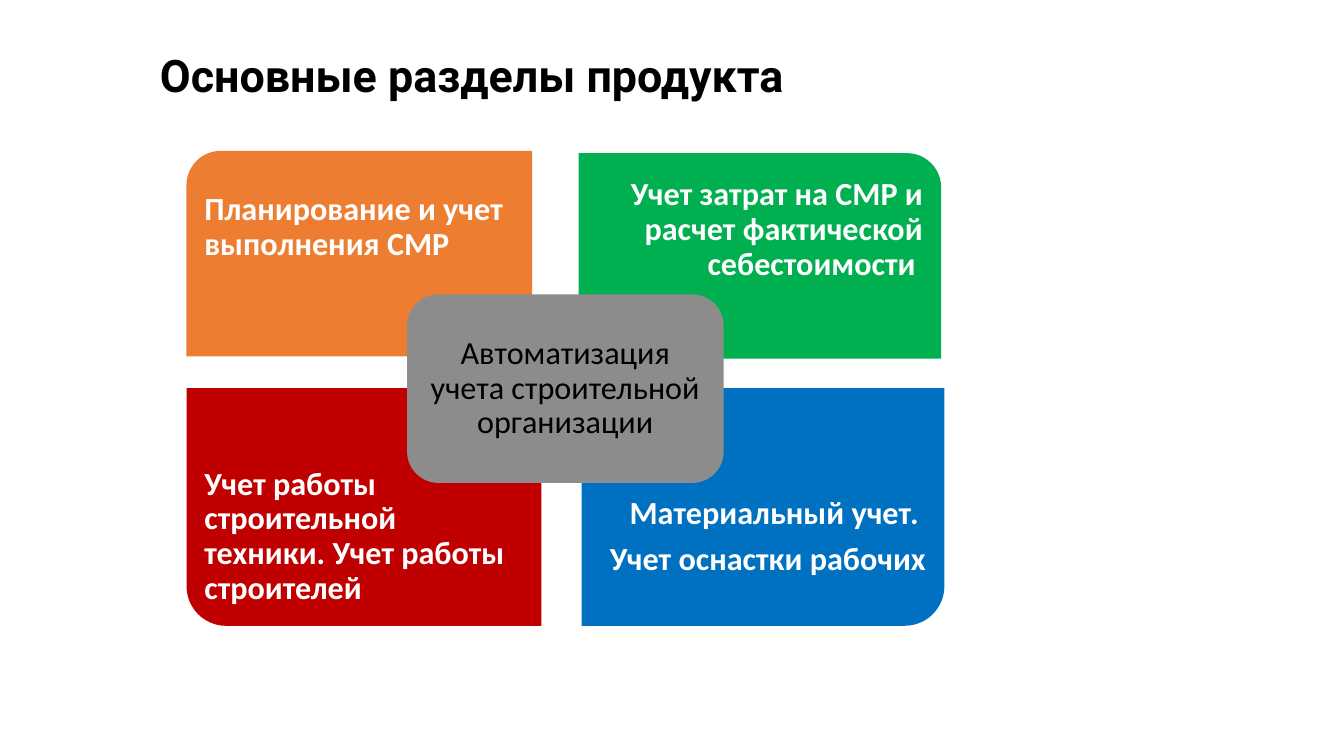
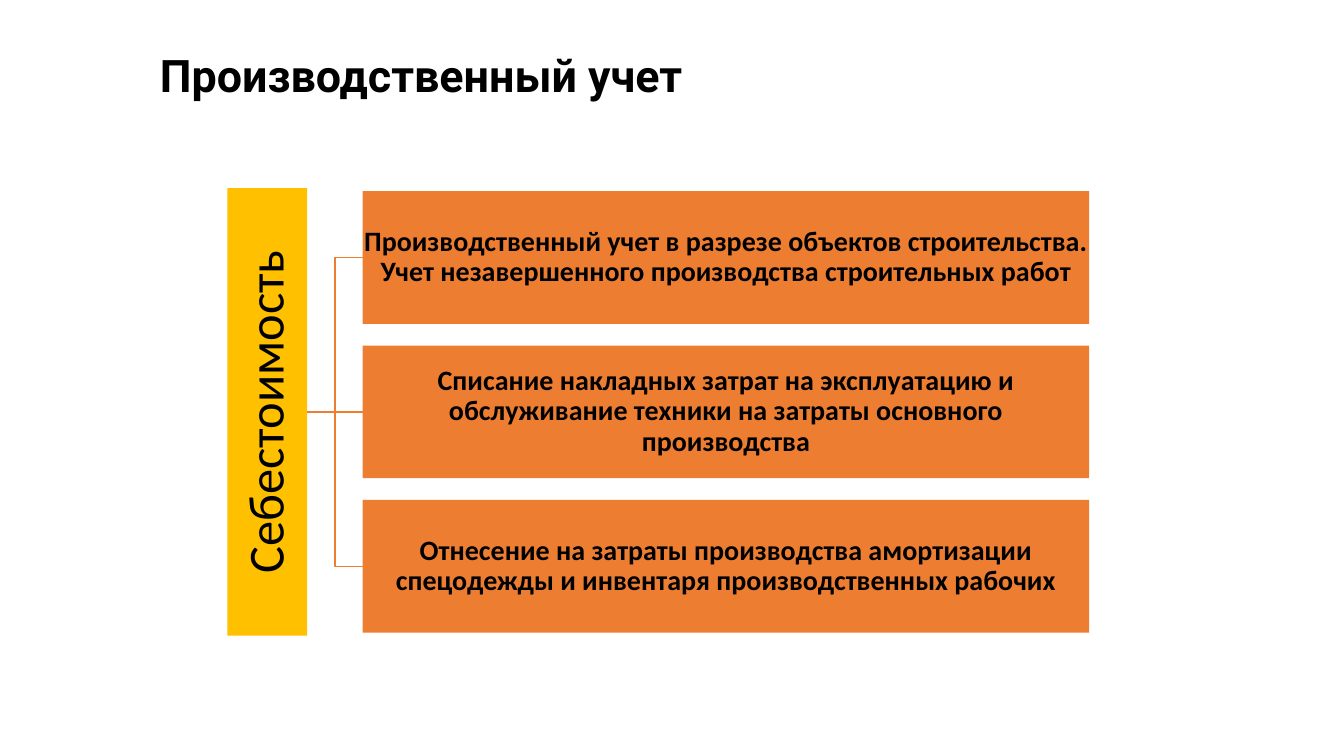
import pptx
import pptx.dml.color
import pptx.enum.shapes
import pptx.enum.text
import pptx.oxml
import pptx.util

Cm = pptx.util.Cm
Pt = pptx.util.Pt
Align = pptx.enum.text.PP_ALIGN
Shape = pptx.enum.shapes.MSO_SHAPE
Connector = pptx.enum.shapes.MSO_CONNECTOR

COLORS = {
    "black": "000000",
    "white": "FFFFFF",
    "orange": "ED7D31",
    "green": "00B050",
    "red": "C00000",
    "blue": "0070C0",
    "gray": "8C8C8C",
    "yellow": "FFC000",
}
BODY_FONT = "Calibri"
TITLE_FONT = "Roboto"
LINE_SPACING = 0.9
TILE_TEXT_SHARE = 0.75

TILES = [
    ((4.7, 3.8, 8.71, 5.18), "orange", 270, Align.LEFT,
     ["Планирование и учет выполнения СМР"]),
    ((14.58, 3.86, 9.14, 5.18), "green", 0, Align.RIGHT,
     ["Учет затрат на СМР и расчет фактической себестоимости "]),
    ((4.7, 9.78, 8.94, 5.99), "red", 180, Align.LEFT,
     ["Учет работы строительной техники. Учет работы строителей"]),
    ((14.66, 9.78, 9.14, 5.99), "blue", 90, Align.RIGHT,
     ["Материальный учет. ", "Учет оснастки рабочих"]),
]
COST_ITEMS = [
    "Производственный учет в разрезе объектов строительства. "
    "Учет незавершенного производства строительных работ",
    "Списание накладных затрат на эксплуатацию и обслуживание техники "
    "на затраты основного производства",
    "Отнесение на затраты производства амортизации спецодежды "
    "и инвентаря производственных рабочих",
]


def rgb(name):
    """Return the named colour."""
    return pptx.dml.color.RGBColor.from_string(COLORS[name])


def write_text(shape, lines, size, color="black", bold=False,
               align=Align.CENTER, inset=0.25, font=BODY_FONT):
    """Fill a shape with vertically centred paragraphs."""
    frame = shape.text_frame
    frame.word_wrap = True
    frame.vertical_anchor = pptx.enum.text.MSO_ANCHOR.MIDDLE
    frame.margin_left = frame.margin_right = Cm(inset)
    frame.margin_top = frame.margin_bottom = Cm(inset)
    for index, line in enumerate(lines):
        paragraph = frame.add_paragraph() if index else frame.paragraphs[0]
        paragraph.alignment = align
        paragraph.line_spacing = LINE_SPACING
        if index:
            paragraph.space_before = Pt(8)
        run = paragraph.add_run()
        run.text = line
        run.font.name = font
        run.font.size = Pt(size)
        run.font.bold = bold
        run.font.color.rgb = rgb(color)


def add_block(slide, kind, box, color):
    """Add a flat filled shape without outline."""
    shape = slide.shapes.add_shape(kind, *map(Cm, box))
    shape.shadow.inherit = False
    shape.fill.solid()
    shape.fill.fore_color.rgb = rgb(color)
    shape.line.fill.background()
    return shape


def add_titled_slide(presentation, title):
    """Add a blank slide with the shared title style."""
    slide = presentation.slides.add_slide(presentation.slide_layouts[6])
    text_box = slide.shapes.add_textbox(Cm(3.78), Cm(1.17), Cm(27.25), Cm(1.6))
    write_text(text_box, [title], 32, bold=True, align=Align.LEFT, font=TITLE_FONT)
    return slide


def add_tile(slide, box, color, rotation, align, lines):
    """Add a tile whose rounded corner is turned to the outside."""
    left, top, width, height = box
    text_height = height * TILE_TEXT_SHARE
    text_top = top + height - text_height if rotation in (90, 180) else top
    if rotation in (90, 270):
        shift = (width - height) / 2
        box = (left + shift, top - shift, height, width)
    tile = add_block(slide, Shape.ROUND_1_RECTANGLE, box, color)
    tile.rotation = rotation
    text_box = slide.shapes.add_textbox(
        *map(Cm, (left, text_top, width, text_height)))
    write_text(text_box, lines, 23, "white", True, align, 0.45)


def add_link(slide, source, target, kind):
    """Join the right side of one block to the left side of another."""
    link = slide.shapes.add_connector(kind, 0, 0, 0, 0)
    link.begin_connect(source, 3)
    link.end_connect(target, 1)
    link.line.color.rgb = rgb("orange")
    link.line.width = Pt(1)
    properties = link._element.spPr
    properties.append(pptx.oxml.parse_xml(
        '<a:effectLst xmlns:a="http://schemas.openxmlformats.org/drawingml/2006/main"/>'))


def add_cost_tree(slide, left, top, width, height):
    """Add the vertical heading bar and its linked items."""
    bar_width, item_left, item_height, pitch = 2.01, 3.41, 3.34, 3.89
    bar = add_block(slide, Shape.RECTANGLE, (left, top, bar_width, height), "yellow")
    write_text(bar, ["Себестоимость"], 36, inset=0.08)
    bar.text_frame._txBody.bodyPr.set("vert", "vert270")
    middle = len(COST_ITEMS) // 2
    first_top = top + (height - item_height) / 2 - middle * pitch
    for index, text in enumerate(COST_ITEMS):
        box = (left + item_left, first_top + index * pitch,
               width - item_left, item_height)
        item = add_block(slide, Shape.RECTANGLE, box, "orange")
        write_text(item, [text], 20, bold=True, inset=0.03)
        kind = Connector.STRAIGHT if index == middle else Connector.ELBOW
        add_link(slide, bar, item, kind)


def build_sections_slide(presentation):
    """Build the slide with four tiles around a centre block."""
    slide = add_titled_slide(presentation, "Основные разделы продукта")
    for tile in TILES:
        add_tile(slide, *tile)
    centre = add_block(
        slide, Shape.ROUNDED_RECTANGLE, (10.26, 7.42, 7.98, 4.75), "gray")
    write_text(centre, ["Автоматизация учета строительной организации"], 23)


def build_costs_slide(presentation):
    """Build the slide with the cost tree."""
    slide = add_titled_slide(presentation, "Производственный учет")
    add_cost_tree(slide, 5.73, 4.74, 21.72, 11.28)


def main():
    """Build and save the presentation."""
    presentation = pptx.Presentation()
    presentation.slide_width = Cm(33.87)
    presentation.slide_height = Cm(19.05)
    build_sections_slide(presentation)
    build_costs_slide(presentation)
    presentation.save("out.pptx")


if __name__ == "__main__":
    main()
